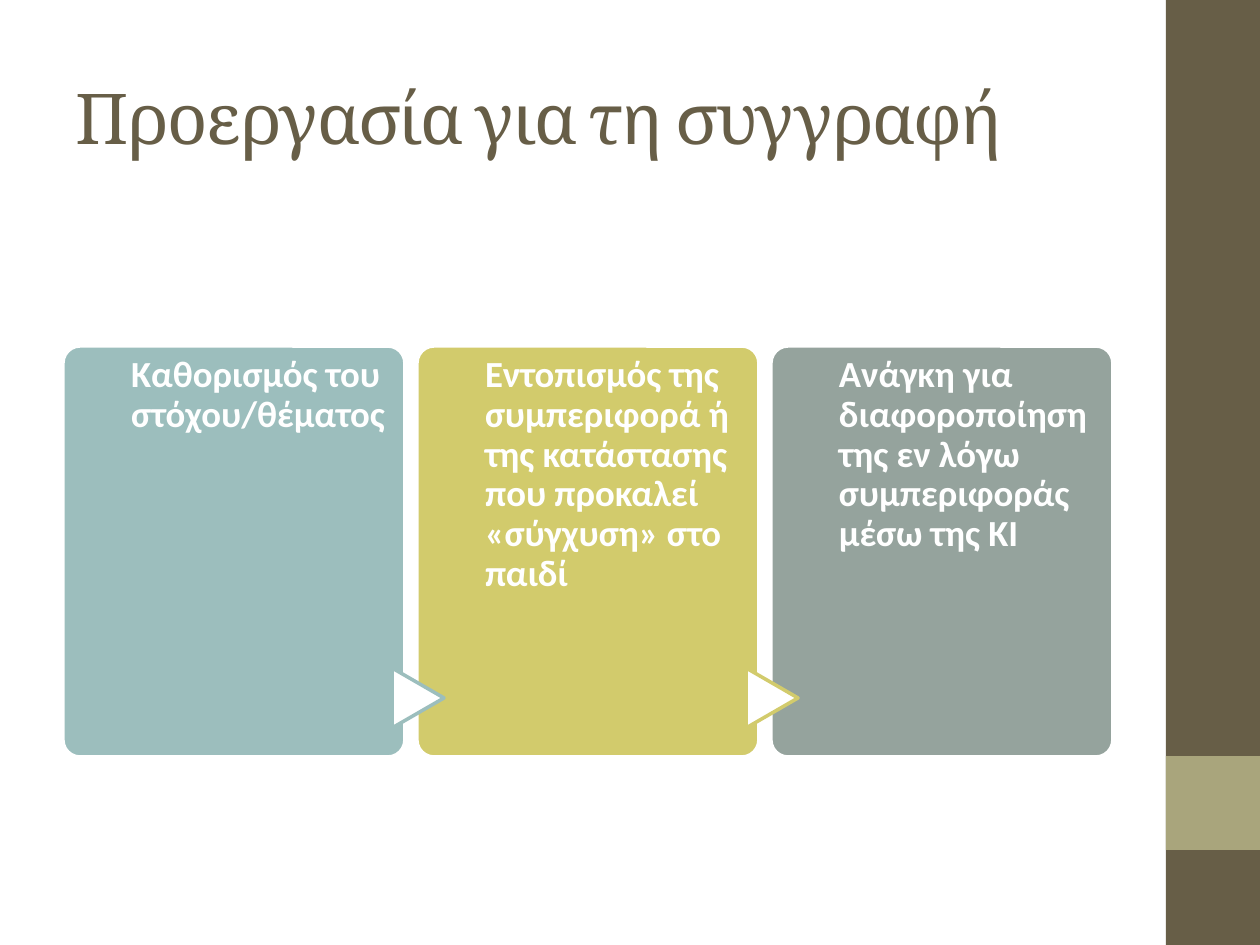
from dataclasses import dataclass

from pptx import Presentation
from pptx.dml.color import RGBColor
from pptx.enum.shapes import MSO_SHAPE
from pptx.enum.text import MSO_ANCHOR
from pptx.util import Emu, Pt


@dataclass(frozen=True)
class Theme:
    brown: str = "675E47"
    olive: str = "A9A57C"
    white: str = "FFFFFF"
    steps: tuple = ("9CBEBD", "D2CB6C", "95A39D")
    title_font: str = "Cambria"
    step_font: str = "Calibri"
    title_size: int = 40
    step_size: int = 21
    outline: int = 2


THEME = Theme()
STEPS = (
    "Καθορισμός του στόχου/θέματος",
    "Εντοπισμός της συμπεριφορά ή της κατάστασης που προκαλεί «σύγχυση» στο παιδί",
    "Ανάγκη για διαφοροποίηση της εν λόγω συμπεριφοράς μέσω της ΚΙ",
)


def px(length):
    return Emu(round(length * 914400 / 126))


def add_block(slide, preset, box, fill, outline=None):
    block = slide.shapes.add_shape(preset, *map(px, box))
    block.shadow.inherit = False
    block.fill.solid()
    block.fill.fore_color.rgb = RGBColor.from_string(fill)
    if outline:
        block.line.color.rgb = RGBColor.from_string(outline)
        block.line.width = Pt(THEME.outline)
    else:
        block.line.fill.background()
    return block


def add_words(slide, box, words, font, size, color, bold=False):
    frame = slide.shapes.add_textbox(*map(px, box)).text_frame
    frame.word_wrap = True
    run = frame.paragraphs[0].add_run()
    run.text = words
    run.font.name = font
    run.font.size = Pt(size)
    run.font.bold = bold
    run.font.color.rgb = RGBColor.from_string(color)
    return frame


def add_sidebar(slide, box):
    left, top, width, height = box
    add_block(slide, MSO_SHAPE.RECTANGLE, box, THEME.brown)
    accent = (left, top + height * 4 // 5, width, width)
    add_block(slide, MSO_SHAPE.RECTANGLE, accent, THEME.olive)


def add_title(slide, box, words):
    frame = add_words(slide, box, words, THEME.title_font, THEME.title_size, THEME.brown)
    frame.vertical_anchor = MSO_ANCHOR.MIDDLE
    frame.paragraphs[0].runs[0].font._element.set("spc", "-100")


def add_step(slide, box, words, fill):
    left, top, width, height = box
    card = add_block(slide, MSO_SHAPE.ROUNDED_RECTANGLE, box, fill, THEME.white)
    card.adjustments[0] = 0.05
    frame = add_words(slide, (left + 68, top, width - 86, height), words,
                      THEME.step_font, THEME.step_size, THEME.white, True)
    frame.margin_left = frame.margin_right = frame.margin_bottom = 0
    frame.margin_top = px(10)
    frame.paragraphs[0].line_spacing = 0.9


def add_process(slide, box, steps):
    left, top, width, height = box
    gap = 12
    card_width = (width - gap * (len(steps) - 1)) // len(steps)
    pitch = card_width + gap
    for index, words in enumerate(steps):
        card_left = left + index * pitch
        add_step(slide, (card_left, top, card_width, height), words, THEME.steps[index])
        if index:
            pointer_box = (card_left - 29, top + 326, 60, 52)
            pointer = add_block(slide, MSO_SHAPE.FLOWCHART_EXTRACT, pointer_box,
                                THEME.white, THEME.steps[index - 1])
            pointer.rotation = 90


def main():
    deck = Presentation()
    deck.slide_width, deck.slide_height = px(1260), px(945)
    slide = deck.slides.add_slide(deck.slide_layouts[6])
    add_sidebar(slide, (1166, 0, 94, 945))
    add_title(slide, (63, 38, 1050, 158), "Προεργασία για τη συγγραφή")
    add_process(slide, (63, 346, 1050, 411), STEPS)
    deck.save("out.pptx")


if __name__ == "__main__":
    main()
